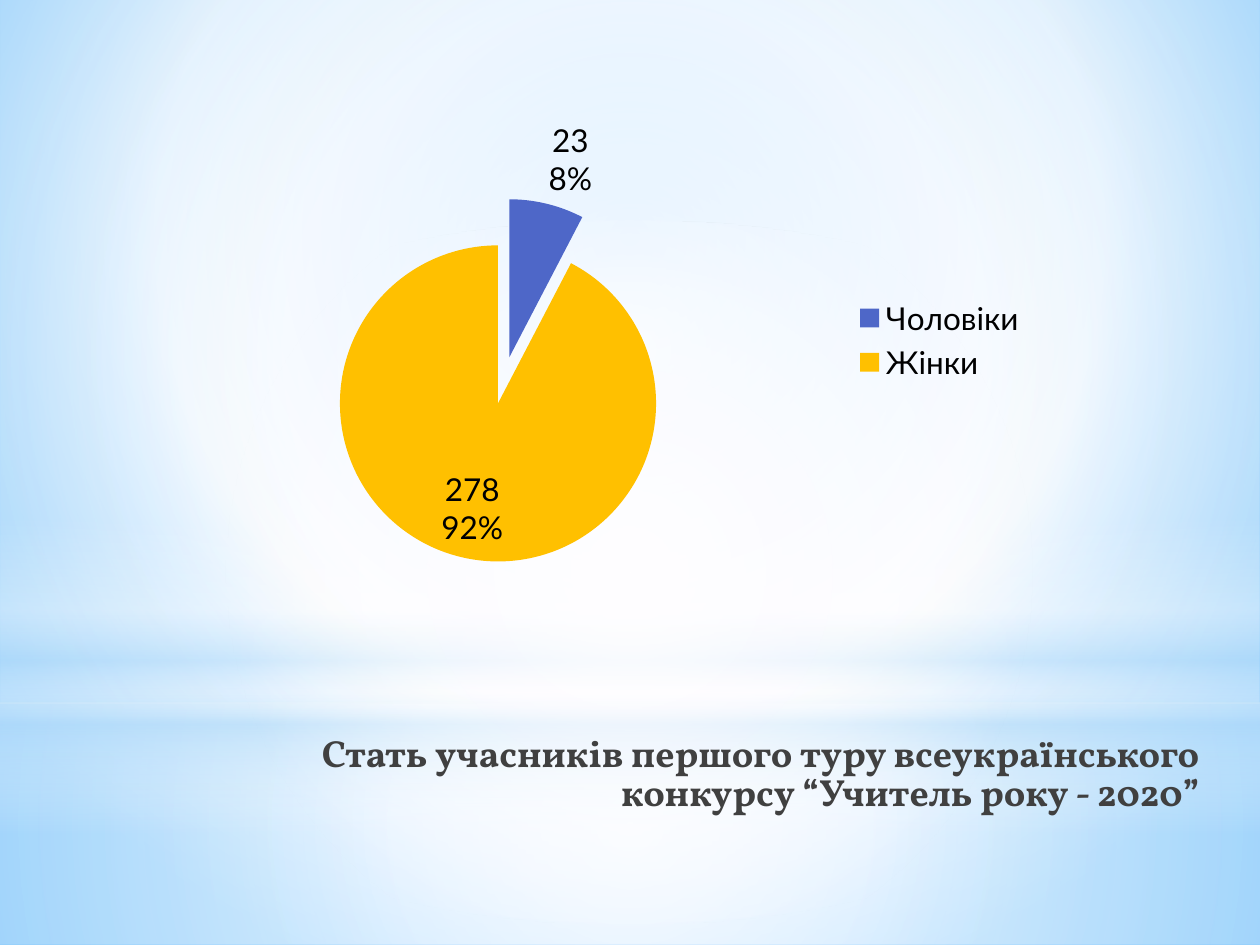
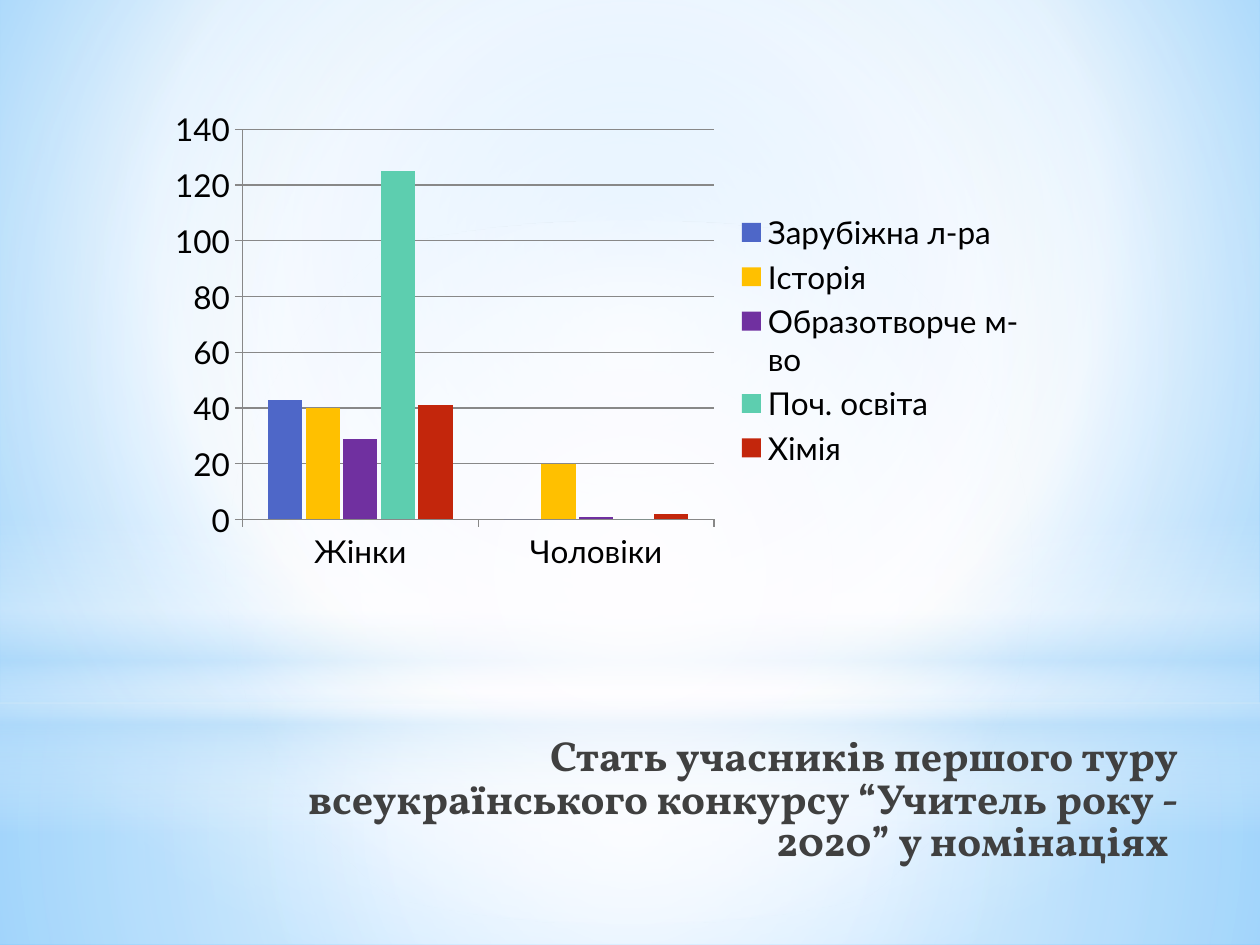
from dataclasses import dataclass
from lxml.etree import SubElement
from pptx import Presentation
from pptx.chart.data import CategoryChartData as ChartData
from pptx.dml.color import RGBColor as Rgb
from pptx.enum.chart import XL_CHART_TYPE as Kind, XL_LABEL_POSITION as Spot
from pptx.enum.chart import XL_LEGEND_POSITION as Side, XL_TICK_MARK as Tick
from pptx.enum.shapes import MSO_SHAPE as Form
from pptx.enum.text import MSO_ANCHOR as Anchor, PP_ALIGN as Align
from pptx.oxml.ns import qn
from pptx.util import Inches, Pt


@dataclass(frozen=True)
class Theme:
    head: str = "Vollkorn"
    body: str = "Lato"
    label: int = 18
    ink: str = "404040"
    text: str = "000000"
    rule: str = "888888"
    blue: str = "4E67C8"
    gold: str = "FFC000"
    plum: str = "7030A0"
    mint: str = "5DCEAF"
    red: str = "C3260C"
    glow: str = "FFFEFF"
    mist: str = "B4DCFA"
    sky: tuple = ((0, "9ED5FF", 100), (60, "FFFFFF", 100), (100, "5BB9FF", 100))


class Deck:
    def __init__(self, theme):
        self.theme = theme
        self.prs = Presentation()
        self.prs.slide_width = Inches(10)
        self.prs.slide_height = Inches(7.5)
        self.slide = None

    def page(self):
        t = self.theme
        self.slide = self.prs.slides.add_slide(self.prs.slide_layouts[6])
        self.slide.background.fill.solid()
        self.shade(self.slide.element, t.sky, (20, 10, 20, 60))
        mid = (50, 50, 50, 50)
        floor = (0, t.glow, 91), (37, t.glow, 76), (100, t.mist, 79)
        wall = (0, t.glow, 89), (48, t.glow, 62), (100, t.mist, 79)
        edge = ((0, t.glow, 0), (29, t.glow, 30), (45, t.mist, 40),
                (55, t.glow, 26), (65, t.mist, 60), (100, t.glow, 0))
        halo = (0, t.glow, 100), (56, t.glow, 0)
        self.band(Form.RECTANGLE, 5.58, 1.92, floor, mid)
        self.band(Form.RECTANGLE, 0, 5.58, wall, mid)
        self.band(Form.RECTANGLE, 4.12, 2.5, edge)
        self.band(Form.OVAL, 1.75, 5.58, halo, mid)

    def shade(self, host, stops, focus=None):
        flat = next(host.iter(qn("a:solidFill")))
        grad = flat.makeelement(qn("a:gradFill"), {"rotWithShape": "1"})
        flat.getparent().replace(flat, grad)
        rows = SubElement(grad, qn("a:gsLst"))
        for pos, color, alpha in stops:
            stop = SubElement(rows, qn("a:gs"), pos=str(pos * 1000))
            tone = SubElement(stop, qn("a:srgbClr"), val=color)
            if alpha < 100:
                SubElement(tone, qn("a:alpha"), val=str(alpha * 1000))
        if focus:
            way = SubElement(grad, qn("a:path"), path="circle")
            rect = SubElement(way, qn("a:fillToRect"))
            for side, part in zip("ltrb", focus):
                rect.set(side, str(part * 1000))
        else:
            SubElement(grad, qn("a:lin"), ang="5400000", scaled="0")

    def band(self, form, top, height, stops, focus=None):
        shape = self.slide.shapes.add_shape(
            form, 0, Inches(top), self.prs.slide_width, Inches(height))
        shape.shadow.inherit = False
        shape.line.fill.background()
        shape.fill.solid()
        self.shade(shape.element, stops, focus)

    def title(self, text, left, width, size):
        box = self.slide.shapes.add_textbox(
            Inches(left), Inches(5.8), Inches(width), Inches(1.25))
        frame = box.text_frame
        frame.word_wrap = True
        frame.vertical_anchor = Anchor.TOP
        frame.text = text
        para = frame.paragraphs[0]
        para.alignment = Align.RIGHT
        para.line_spacing = 0.85
        font = para.runs[0].font
        font.name, font.size, font.bold = self.theme.head, Pt(size), True
        font.color.rgb = Rgb.from_string(self.theme.ink)

    def chart(self, kind, cats, series):
        data = ChartData()
        data.categories = cats
        for name, vals in series:
            data.add_series(name, vals)
        chart = self.slide.shapes.add_chart(
            kind, Inches(1.25), Inches(0.8), Inches(7), Inches(3.8), data).chart
        chart.has_title = False
        chart.font.name = self.theme.body
        chart.font.size = Pt(self.theme.label)
        chart.font.color.rgb = Rgb.from_string(self.theme.text)
        chart.has_legend = True
        chart.legend.position = Side.RIGHT
        chart.legend.include_in_layout = False
        return chart

    def paint(self, item, color):
        item.format.fill.solid()
        item.format.fill.fore_color.rgb = Rgb.from_string(color)

    def pie(self, cats, vals, colors):
        plot = self.chart(Kind.PIE, cats, [("Series 1", vals)]).plots[0]
        ser = plot.series[0]
        for i, color in enumerate(colors):
            self.paint(ser.points[i], color)
        burst = ser._element.makeelement(qn("c:explosion"), {"val": "15"})
        ser._element.find(qn("c:dPt")).addprevious(burst)
        plot.has_data_labels = True
        labels = plot.data_labels
        labels.show_value = labels.show_percentage = True
        labels.position = Spot.BEST_FIT
        mark = labels._element.makeelement(qn("c:separator"), {})
        mark.text = "\n"
        labels._element.find(qn("c:showBubbleSize")).addnext(mark)

    def bars(self, cats, series, colors):
        chart = self.chart(Kind.COLUMN_CLUSTERED, cats, series)
        plot = chart.plots[0]
        plot.vary_by_categories = False
        plot.gap_width, plot.overlap = 150, -10
        for ser, color in zip(plot.series, colors):
            self.paint(ser, color)
        axis = chart.value_axis
        axis.has_major_gridlines = True
        for part in axis, chart.category_axis, axis.major_gridlines:
            part.format.line.color.rgb = Rgb.from_string(self.theme.rule)
            part.format.line.width = Pt(0.75)
        for part in axis, chart.category_axis:
            part.major_tick_mark = Tick.OUTSIDE


def main():
    t = Theme()
    deck = Deck(t)
    topic = "Стать учасників першого туру всеукраїнського конкурсу “Учитель року - 2020”"

    deck.page()
    deck.title(topic, 2.01, 7.61, 21.6)
    deck.pie(["Чоловіки", "Жінки"], [23, 278], [t.blue, t.gold])

    deck.page()
    deck.title(topic + " у номінаціях ", 2.32, 7.12, 24)
    fields = [("Зарубіжна л-ра", [43, 0]), ("Історія", [40, 20]),
              ("Образотворче м-во", [29, 1]), ("Поч. освіта", [125, 0]),
              ("Хімія", [41, 2])]
    deck.bars(["Жінки", "Чоловіки"], fields,
              [t.blue, t.gold, t.plum, t.mint, t.red])

    deck.prs.save("out.pptx")


if __name__ == "__main__":
    main()
